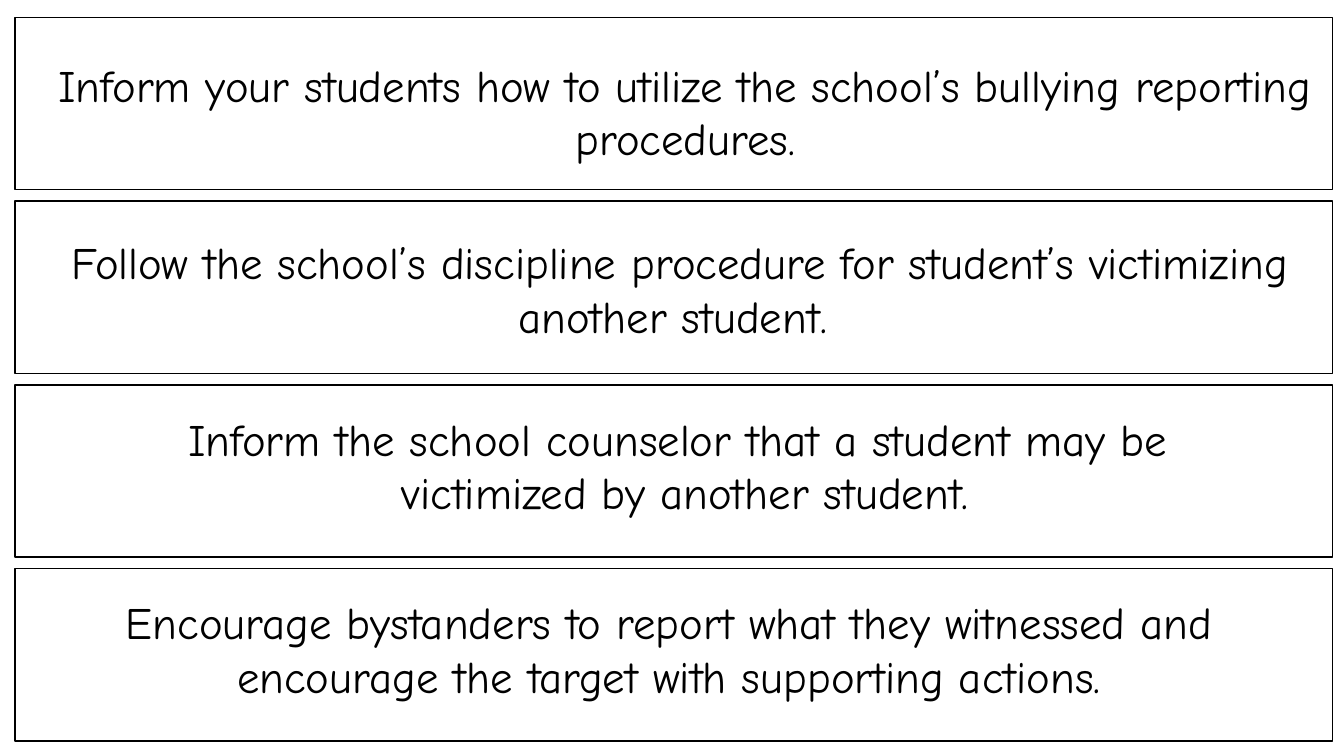
"""Build a slide of four framed steps for responding to bullying."""
from dataclasses import dataclass

from pptx import Presentation
from pptx.dml.color import RGBColor
from pptx.enum.shapes import MSO_SHAPE as Preset
from pptx.enum.text import MSO_AUTO_SIZE as AutoSize, PP_ALIGN as Align
from pptx.slide import Slide
from pptx.util import Pt

FRAME_LEFT, FRAME_TOP = 10.8, 12.3
FRAME_WIDTH, FRAME_HEIGHT = 941, 123.1
FRAME_PITCH = 131.3
WORDING_HEIGHT = 85


@dataclass(frozen=True)
class Step:
    lines: tuple[str, ...]
    left: float
    top: float
    width: float = 913


STEPS = (
    Step(("Inform your students how to utilize the school’s bullying reporting procedures.",),
         33.1, 37.4),
    Step(("Follow the school’s discipline procedure for student’s victimizing another student. ",),
         29.5, 164.2),
    Step(("Inform the school counselor that a student may be ",
          "victimized by another student."), 20.2, 290.2, 938.9),
    Step(("Encourage bystanders to report what they witnessed and "
          "encourage the target with supporting actions.",), 21.6, 421.2),
)


def color(hex_code: str) -> RGBColor:
    return RGBColor.from_string(hex_code)


def draw_frame(slide: Slide, row: int) -> None:
    frame = slide.shapes.add_shape(
        Preset.RECTANGLE, Pt(FRAME_LEFT), Pt(FRAME_TOP + row * FRAME_PITCH),
        Pt(FRAME_WIDTH), Pt(FRAME_HEIGHT))
    frame.shadow.inherit = False
    frame.fill.solid()
    frame.fill.fore_color.rgb = color("FFFFFF")
    frame.line.color.rgb = color("000000")
    frame.line.width = Pt(1)


def write_step(slide: Slide, step: Step) -> None:
    wording = slide.shapes.add_textbox(
        Pt(step.left), Pt(step.top), Pt(step.width), Pt(WORDING_HEIGHT)).text_frame
    wording.word_wrap = True
    wording.auto_size = AutoSize.SHAPE_TO_FIT_TEXT
    wording.text = "\n".join(step.lines)
    for paragraph in wording.paragraphs:
        paragraph.alignment = Align.CENTER
        paragraph.font.name = "Comic Neue"
        paragraph.font.size = Pt(32)
        paragraph.font.color.rgb = color("000000")


def main() -> None:
    deck = Presentation()
    deck.slide_width, deck.slide_height = Pt(960), Pt(540)
    slide = deck.slides.add_slide(deck.slide_layouts[6])
    for row in range(len(STEPS)):
        draw_frame(slide, row)
    for step in STEPS:
        write_step(slide, step)
    deck.save("out.pptx")


if __name__ == "__main__":
    main()
